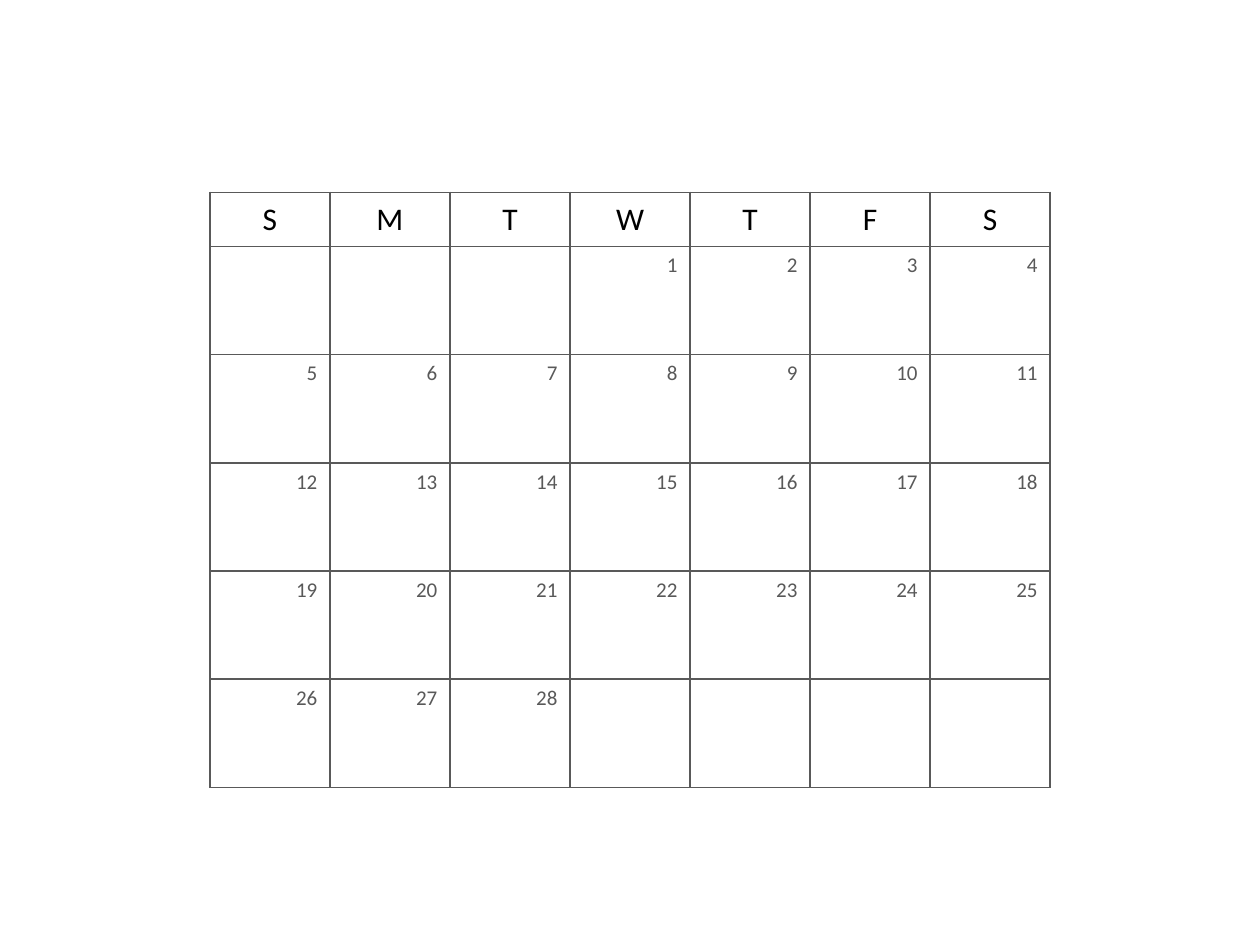
from lxml import etree
from pptx import Presentation
from pptx.dml.color import RGBColor
from pptx.enum.text import MSO_ANCHOR, PP_ALIGN
from pptx.oxml.ns import qn
from pptx.util import Cm, Pt

CENTER, RIGHT = PP_ALIGN.CENTER, PP_ALIGN.RIGHT
TOP, MIDDLE = MSO_ANCHOR.TOP, MSO_ANCHOR.MIDDLE

COLORS = {"heading": "000000", "day": "595959", "border": "595959"}
FONT = "Calibri"
WEEKDAYS = "SMTWTFS"
WEEKS = 5
FIRST_COLUMN = 3
DAYS = 28
COLUMN_WIDTH = 2.42
HEADING_HEIGHT = 1.09
WEEK_HEIGHT = 2.18


def draw_borders(cell, color, width):
    """Outline all four sides of a table cell."""
    properties = cell._tc.get_or_add_tcPr()
    for side in ("lnL", "lnR", "lnT", "lnB"):
        line = etree.SubElement(properties, qn(f"a:{side}"), w=str(Pt(width)))
        fill = etree.SubElement(line, qn("a:solidFill"))
        etree.SubElement(fill, qn("a:srgbClr"), val=color)


def write_text(cell, text, *, size, color, align, anchor=TOP):
    """Put formatted text in a table cell."""
    cell.vertical_anchor = anchor
    para = cell.text_frame.paragraphs[0]
    para.alignment = align
    span = para.add_run()
    span.text = text
    span.font.name = FONT
    span.font.size = Pt(size)
    span.font.color.rgb = RGBColor.from_string(color)


def add_grid(page, left, top):
    """Add the empty, bordered calendar table."""
    columns = len(WEEKDAYS)
    height = HEADING_HEIGHT + WEEKS * WEEK_HEIGHT
    frame = page.shapes.add_table(
        WEEKS + 1, columns, Cm(left), Cm(top), Cm(columns * COLUMN_WIDTH), Cm(height)
    )
    table = frame.table
    table.first_row = False
    table.horz_banding = False
    for column in table.columns:
        column.width = Cm(COLUMN_WIDTH)
    for index, row in enumerate(table.rows):
        row.height = Cm(WEEK_HEIGHT if index else HEADING_HEIGHT)
    for cell in table.iter_cells():
        draw_borders(cell, COLORS["border"], 1)
        cell.fill.background()
    return table


def fill_month(table):
    """Write the weekday headings and the day numbers."""
    for column, weekday in enumerate(WEEKDAYS):
        write_text(table.cell(0, column), weekday, size=18,
                   color=COLORS["heading"], align=CENTER, anchor=MIDDLE)
    for day in range(1, DAYS + 1):
        week, column = divmod(FIRST_COLUMN + day - 1, len(WEEKDAYS))
        write_text(table.cell(week + 1, column), str(day), size=12,
                   color=COLORS["day"], align=RIGHT)


def main():
    """Build the calendar slide and save it."""
    deck = Presentation()
    deck.slide_width, deck.slide_height = Cm(25.4), Cm(19.05)
    page = deck.slides.add_slide(deck.slide_layouts[6])
    fill_month(add_grid(page, 4.23, 3.88))
    deck.save("out.pptx")


if __name__ == "__main__":
    main()
